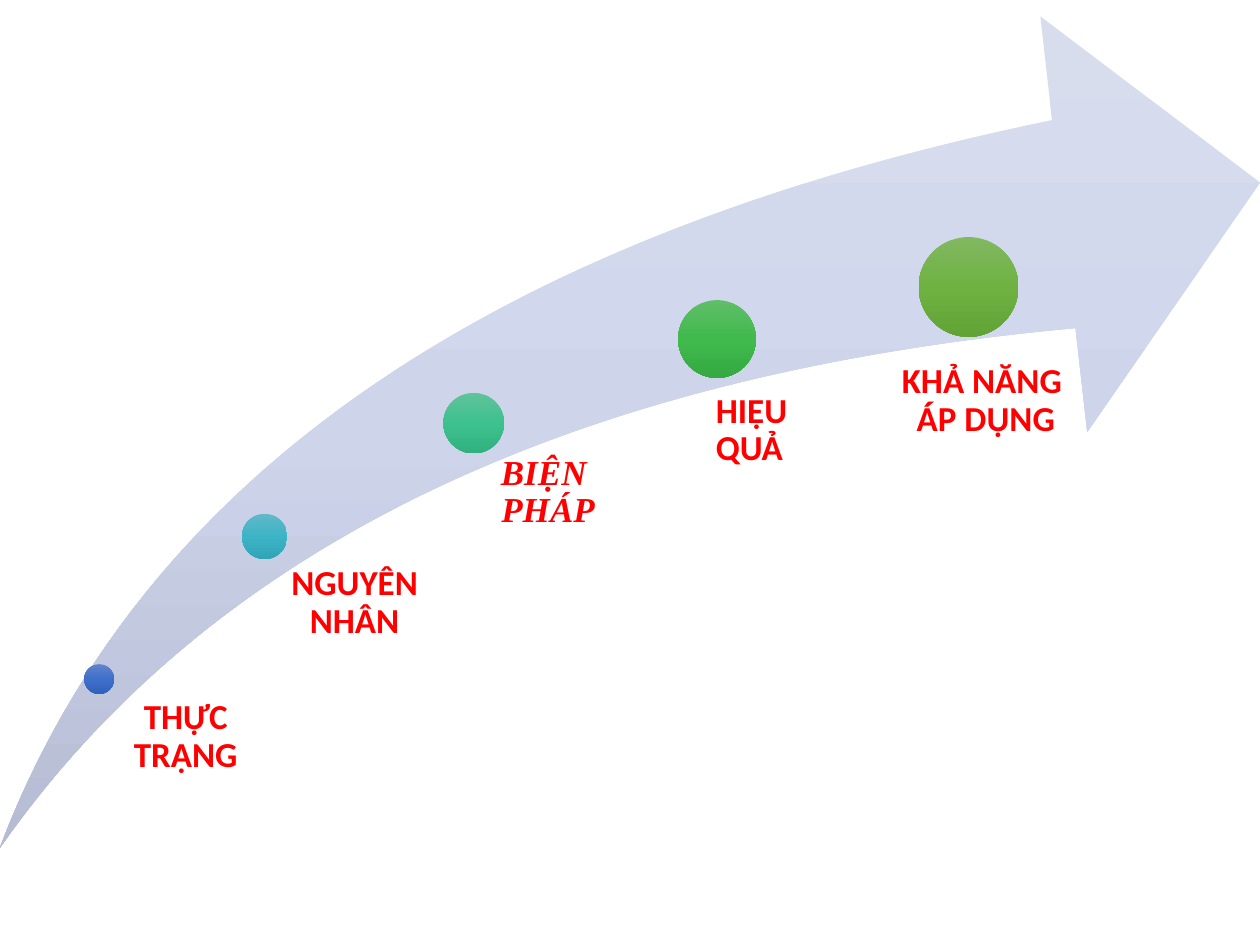
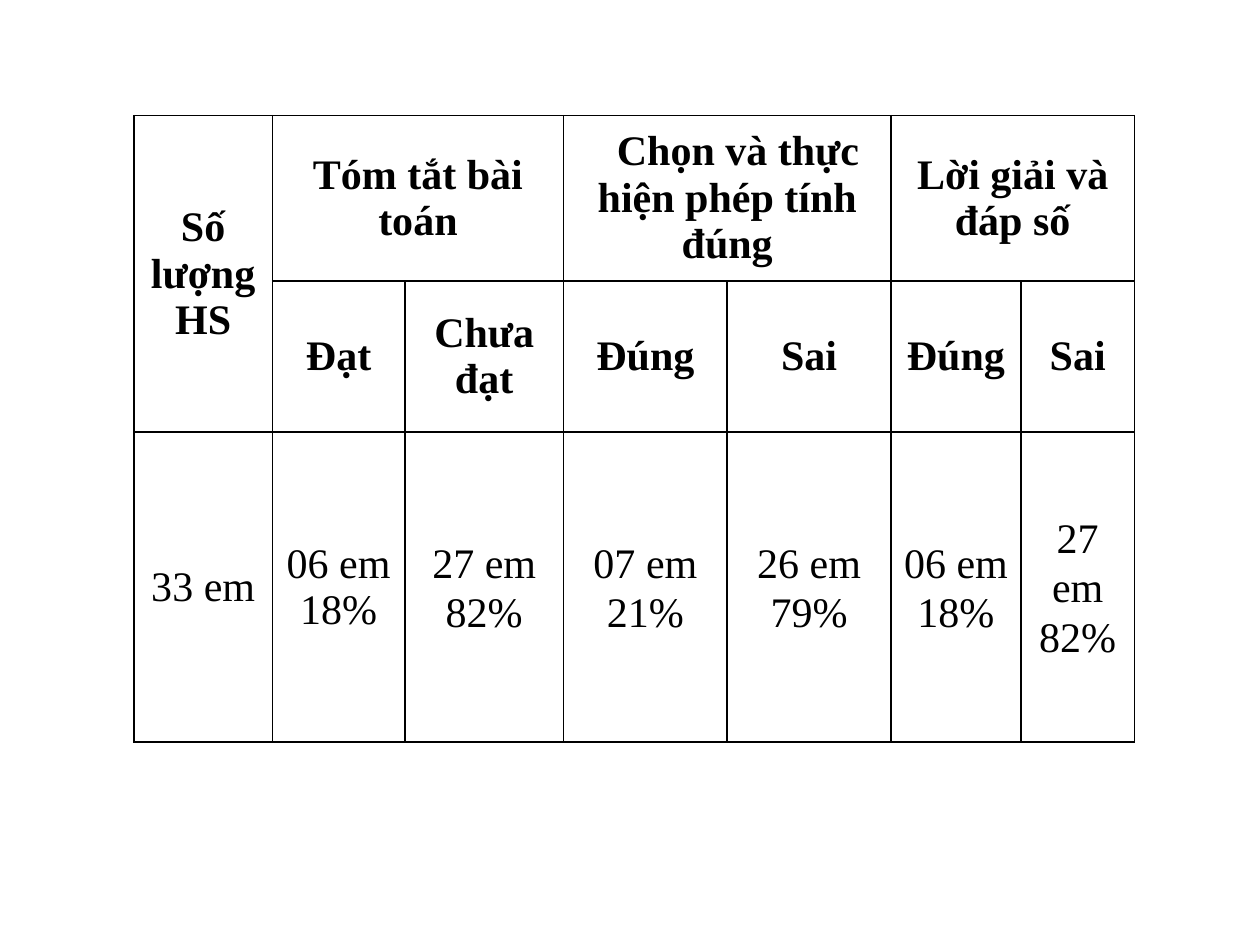
from copy import deepcopy

from lxml import etree
from pptx import Presentation
from pptx.dml.color import RGBColor
from pptx.enum.shapes import MSO_SHAPE
from pptx.enum.text import MSO_ANCHOR, PP_ALIGN
from pptx.oxml.ns import qn
from pptx.util import Cm, Pt

SWOOSH, OVAL = MSO_SHAPE.SWOOSH_ARROW, MSO_SHAPE.OVAL
LEFT, CENTER = PP_ALIGN.LEFT, PP_ALIGN.CENTER
MIDDLE = MSO_ANCHOR.MIDDLE

SANS, SERIF = "Calibri", "Times New Roman"
RED = RGBColor(0xFF, 0x00, 0x00)
BLACK = RGBColor(0x00, 0x00, 0x00)
ARROW_COLOURS = ("D8DDEE", "CED5EB", "B5BCD3")


def add_gradient_shape(shapes, kind, left, top, width, height, colours):
    """Add a shape without outline, shaded from top to bottom."""
    shape = shapes.add_shape(kind, Cm(left), Cm(top), Cm(width), Cm(height))
    shape.shadow.inherit = False
    shape.line.fill.background()
    shape.fill.gradient()
    shape.fill.gradient_angle = 270
    stop_list = shape._element.xpath(".//a:gsLst")[0]
    stop_list.append(deepcopy(stop_list[0]))
    for index, (stop, colour) in enumerate(zip(shape.fill.gradient_stops, colours)):
        stop.position = index / 2
        stop.color.rgb = RGBColor.from_string(colour)
    return shape


def format_runs(paragraph, font_name, size, colour, bold, italic=False):
    for run in paragraph.runs:
        run.font.name = font_name
        run.font.size = Pt(size)
        run.font.color.rgb = colour
        run.font.bold = bold
        run.font.italic = italic


presentation = Presentation()
presentation.slide_width = Cm(25.4)
presentation.slide_height = Cm(19.05)
blank_layout = presentation.slide_layouts[6]

# Slide 1: five steps along a rising arrow
slide = presentation.slides.add_slide(blank_layout)
steps = slide.shapes.add_group_shape().shapes
arrow = add_gradient_shape(steps, SWOOSH, 0, 0.33, 25.4, 16.76, ARROW_COLOURS)
arrow.adjustments[0] = 0.25
arrow.adjustments[1] = 0.25

# Dot (left, top, diameter), its colours, label box, left inset, text, font, alignment
STEPS = [
    ((1.7, 13.39, 0.6), ("6183CB", "3E70CA", "3062BB"),
     (1.93, 14.1, 3.33, 3.78), 0.3, "THỰC TRẠNG", SANS, CENTER),
    ((4.88, 10.36, 0.91), ("61B8C7", "3DB4C6", "30A5B7"),
     (4.8, 11.4, 4.22, 5.84), 0.48, "NGUYÊN NHÂN", SANS, CENTER),
    ((8.94, 7.92, 1.22), ("60C39A", "3DC18F", "31B080"),
     (8.28, 9.17, 4.9, 6.76), 0.64, "BIỆN \nPHÁP", SERIF, CENTER),
    ((13.67, 6.05, 1.57), ("60BE68", "40B94D", "34AA41"),
     (13.59, 7.92, 5.08, 8.79), 0.84, "HIỆU \nQUẢ", SANS, LEFT),
    ((18.52, 4.78, 2.01), ("81B861", "6FB242", "62A336"),
     (15.21, 7.32, 8.26, 9.8), 1.07, "KHẢ NĂNG \nÁP DỤNG", SANS, CENTER),
]
for (left, top, diameter), colours, box, inset, text, font_name, alignment in STEPS:
    add_gradient_shape(steps, OVAL, left, top, diameter, diameter, colours)
    text_frame = steps.add_textbox(*[Cm(length) for length in box]).text_frame
    text_frame.word_wrap = True
    text_frame.margin_left = Cm(inset)
    text_frame.margin_top = text_frame.margin_right = text_frame.margin_bottom = 0
    paragraph = text_frame.paragraphs[0]
    paragraph.text = text
    paragraph.alignment = alignment
    paragraph.line_spacing = 0.9
    paragraph.space_after = Pt(6)
    format_runs(paragraph, font_name, 20, RED, True, italic=font_name == SERIF)

# Slide 2: table of results
slide = presentation.slides.add_slide(blank_layout)
COLUMN_WIDTHS = (2.79, 2.67, 3.2, 3.3, 3.3, 2.62, 2.29)
ROW_HEIGHTS = (3.33, 2.62, 6.25)
ROWS = [
    ("Số lượng HS", "Tóm tắt bài toán", "", "Chọn và thực hiện phép tính đúng", "",
     "Lời giải và đáp số", ""),
    ("", "Đạt", "Chưa đạt", "Đúng", "Sai", "Đúng", "Sai"),
    ("33 em", "06 em 18%", "27 em 82%", "07 em 21%", "26 em 79%", "06 em 18%", "27 em 82%"),
]
table = slide.shapes.add_table(
    len(ROWS), len(COLUMN_WIDTHS), Cm(2.7), Cm(2.33),
    Cm(sum(COLUMN_WIDTHS)), Cm(sum(ROW_HEIGHTS))).table
table.first_row = False
table.horz_banding = False
for column, width in zip(table.columns, COLUMN_WIDTHS):
    column.width = Cm(width)
for row, height in zip(table.rows, ROW_HEIGHTS):
    row.height = Cm(height)

# Merged headings
table.cell(0, 0).merge(table.cell(1, 0))
for column_index in (1, 3, 5):
    table.cell(0, column_index).merge(table.cell(0, column_index + 1))

for row_index, texts in enumerate(ROWS):
    for column_index, text in enumerate(texts):
        cell = table.cell(row_index, column_index)
        cell.vertical_anchor = MIDDLE
        cell.margin_left = cell.margin_right = Cm(0.18)
        cell.margin_top = cell.margin_bottom = 0

        # Thin black border on every side
        properties = cell._tc.get_or_add_tcPr()
        for side in ("a:lnL", "a:lnR", "a:lnT", "a:lnB"):
            line = etree.SubElement(properties, qn(side), w=str(Pt(1)))
            line_fill = etree.SubElement(line, qn("a:solidFill"))
            etree.SubElement(line_fill, qn("a:srgbClr"), val=str(BLACK))
        cell.fill.background()

        if not text:
            continue
        paragraph = cell.text_frame.paragraphs[0]
        paragraph.text = text
        paragraph.alignment = CENTER
        paragraph.space_before = paragraph.space_after = Pt(6)
        if row_index == 2 and column_index > 1:
            paragraph.line_spacing = 1.07
        format_runs(paragraph, SERIF, 24, BLACK, bold=row_index < 2)

# The widest heading starts with a first-line indent
heading = table.cell(0, 3).text_frame.paragraphs[0]
heading._p.get_or_add_pPr().set("indent", str(Cm(0.43)))

presentation.save("out.pptx")
